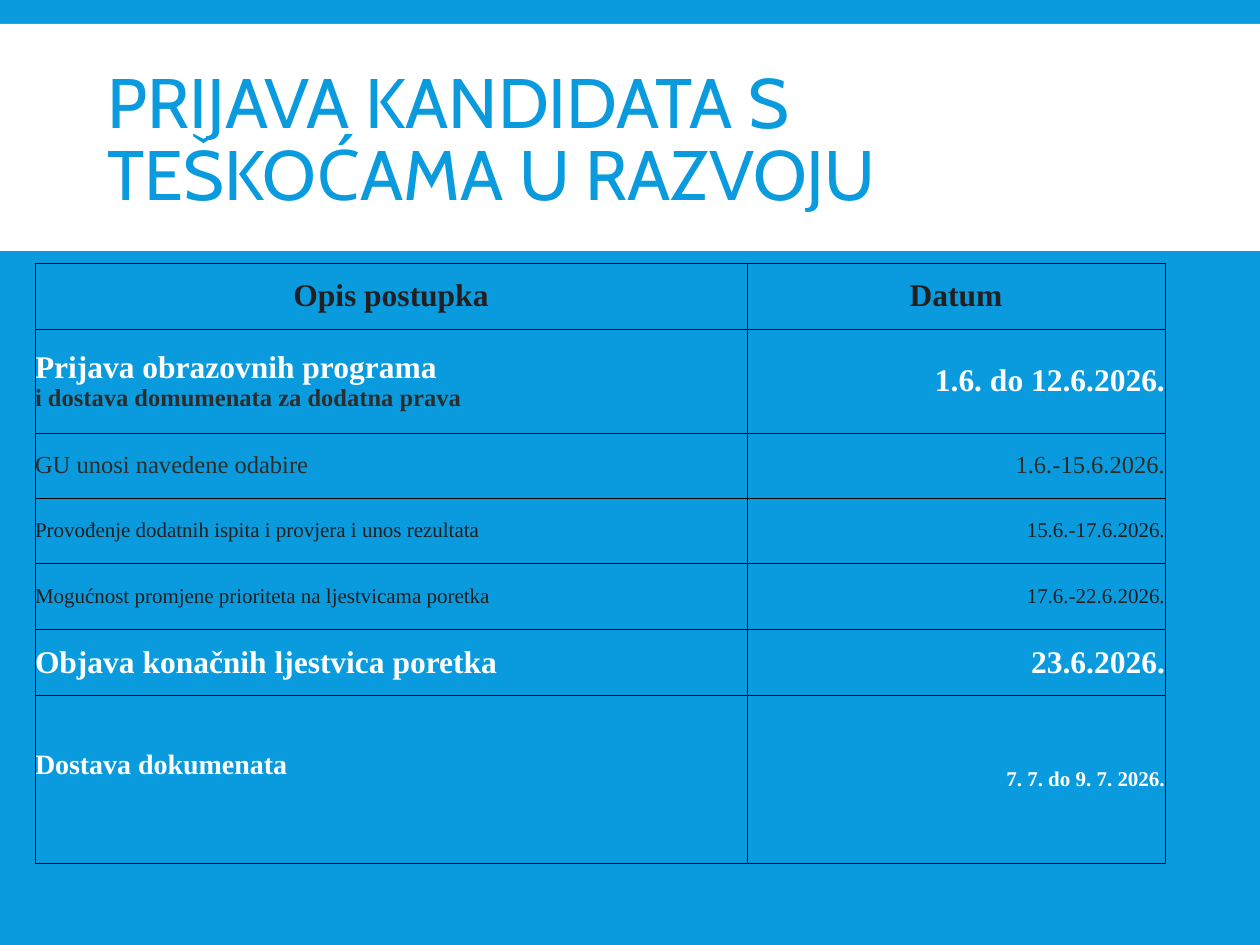
"""Build the slide with the application dates for candidates with developmental difficulties."""
from dataclasses import dataclass

from lxml import etree
from pptx import Presentation
from pptx.dml.color import RGBColor
from pptx.enum.shapes import MSO_SHAPE
from pptx.enum.text import MSO_ANCHOR, MSO_AUTO_SIZE, PP_ALIGN
from pptx.oxml.ns import qn
from pptx.util import Pt

RECTANGLE = MSO_SHAPE.RECTANGLE
MIDDLE = MSO_ANCHOR.MIDDLE
NO_AUTOFIT = MSO_AUTO_SIZE.NONE
LEFT, CENTER, RIGHT = PP_ALIGN.LEFT, PP_ALIGN.CENTER, PP_ALIGN.RIGHT
TITLE_ONLY = 5


@dataclass(frozen=True)
class Theme:
    blue: str = "099BDD"
    white: str = "FFFFFF"
    ink: str = "231F20"
    gray: str = "2C2C2C"
    border: str = "000000"
    title_font: str = "Cabin"
    table_font: str = "Times New Roman"
    title: int = 40
    large: int = 18
    medium: int = 16
    body: int = 14
    small: int = 12


theme = Theme()


def px(length):
    return round(length * 914400 / 126)


def write(para, text, align, font, size, color, bold):
    para.alignment = align
    span = para.add_run()
    span.text = text
    for name, value in {"name": font, "size": Pt(size), "bold": bold}.items():
        setattr(span.font, name, value)
    span.font.color.rgb = RGBColor.from_string(color)


deck = Presentation()
deck.slide_width, deck.slide_height = px(1260), px(945)
page = deck.slides.add_slide(deck.slide_layouts[TITLE_ONLY])
page.background.fill.solid()
page.background.fill.fore_color.rgb = RGBColor.from_string(theme.blue)

band = page.shapes.add_shape(RECTANGLE, 0, px(24), px(1260), px(227))
band.shadow.inherit = False
band.fill.solid()
band.fill.fore_color.rgb = RGBColor.from_string(theme.white)
band.line.fill.background()

title = page.shapes.title
title.element.addprevious(band.element)
title_place = {"left": px(95), "top": px(39), "width": px(1071), "height": px(208)}
for name, value in title_place.items():
    setattr(title, name, value)
title_format = {"vertical_anchor": MIDDLE, "word_wrap": True, "auto_size": NO_AUTOFIT}
for name, value in title_format.items():
    setattr(title.text_frame, name, value)
heading = title.text_frame.paragraphs[0]
heading.line_spacing = 0.85
write(heading, "PRIJAVA KANDIDATA S TEŠKOĆAMA U RAZVOJU", LEFT,
      theme.title_font, theme.title, theme.blue, False)

header = (theme.large, theme.ink, True)
key = (theme.large, theme.white, True)
plain = (theme.body, theme.gray, False)
detail = (theme.small, theme.ink, False)
rows = [
    (66, [("Opis postupka", *header)], ("Datum", *header)),
    (104, [("Prijava obrazovnih programa", *key),
           ("i dostava domumenata za dodatna prava", theme.body, theme.gray, True)],
     ("1.6. do 12.6.2026.", *key)),
    (65, [("GU unosi navedene odabire", *plain)], ("1.6.-15.6.2026.", *plain)),
    (66, [("Provođenje dodatnih ispita i provjera i unos rezultata", *detail)],
     ("15.6.-17.6.2026.", *detail)),
    (66, [("Mogućnost promjene prioriteta na ljestvicama poretka", *detail)],
     ("17.6.-22.6.2026.", *detail)),
    (66, [("Objava konačnih ljestvica poretka", *key)], ("23.6.2026.", *key)),
    (168, [("Dostava dokumenata", theme.medium, theme.white, True)],
     ("7. 7. do 9. 7. 2026.", theme.small, theme.white, True)),
]
column_widths = [712, 418]
total_height = sum(height for height, _, _ in rows)
frame = page.shapes.add_table(len(rows), len(column_widths), px(35), px(263),
                              px(sum(column_widths)), px(total_height))
table = frame.table
table.first_row = False
table.horz_banding = False
for column, width in zip(table.columns, column_widths):
    column.width = px(width)

cell_format = {"margin_left": 0, "margin_right": 0, "margin_top": 0,
               "margin_bottom": 0, "vertical_anchor": MIDDLE}
for row_index, (height, steps, date) in enumerate(rows):
    table.rows[row_index].height = px(height)
    alignments = (CENTER, CENTER) if row_index == 0 else (LEFT, RIGHT)
    for column_index, lines in enumerate((steps, [date])):
        cell = table.cell(row_index, column_index)
        for name, value in cell_format.items():
            setattr(cell, name, value)
        properties = cell._tc.get_or_add_tcPr()
        for side in ("a:lnL", "a:lnR", "a:lnT", "a:lnB"):
            edge = etree.SubElement(properties, qn(side), w=str(Pt(0.6)))
            fill = etree.SubElement(edge, qn("a:solidFill"))
            etree.SubElement(fill, qn("a:srgbClr"), val=theme.border)
        cell.fill.background()
        for line_index, (text, size, color, bold) in enumerate(lines):
            text_frame = cell.text_frame
            para = text_frame.add_paragraph() if line_index else text_frame.paragraphs[0]
            write(para, text, alignments[column_index], theme.table_font, size, color, bold)

table.cell(len(rows) - 1, 0).margin_bottom = px(30)

deck.save("out.pptx")
